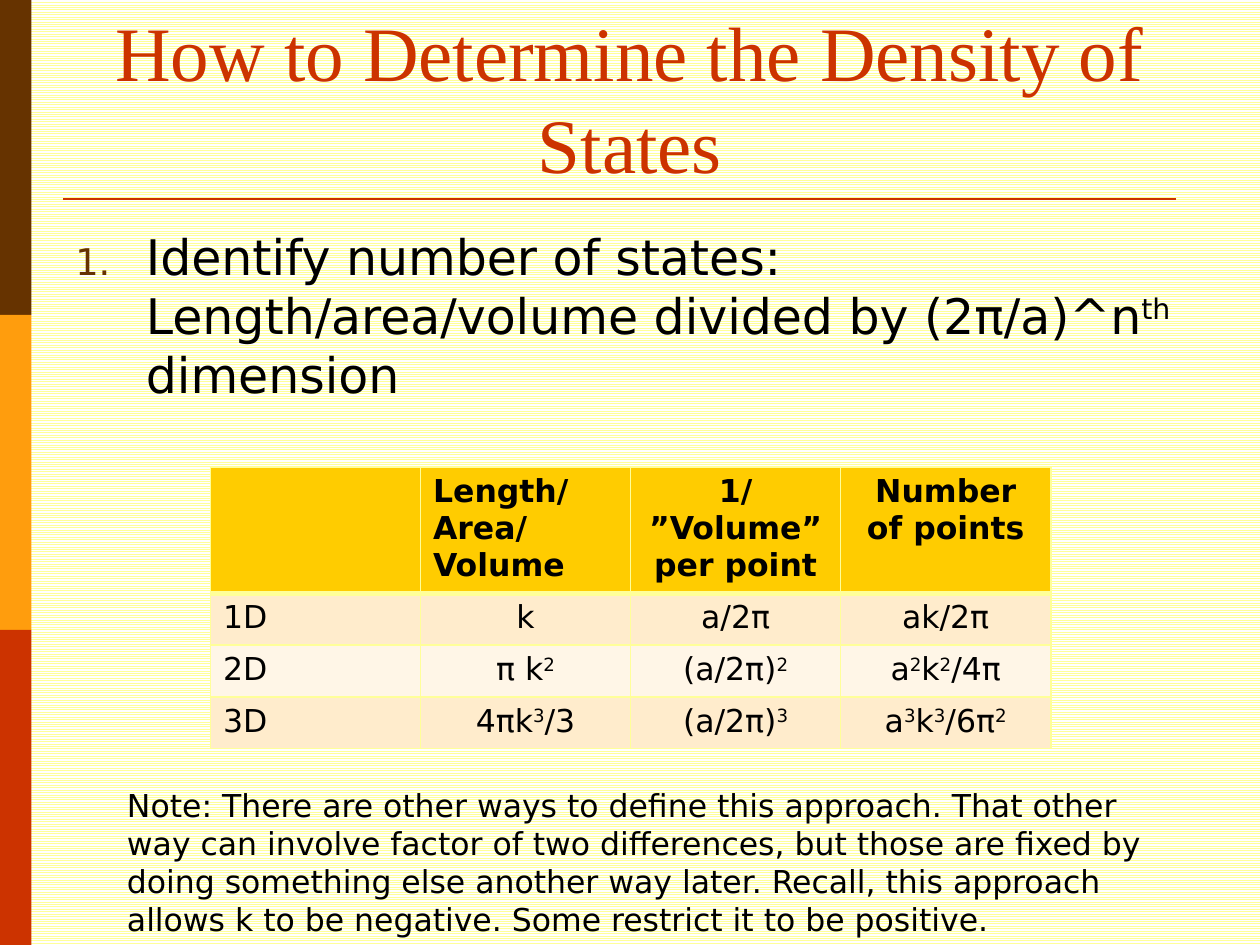
from lxml.etree import SubElement
from pptx import Presentation
from pptx.dml.color import RGBColor
from pptx.enum.dml import MSO_PATTERN
from pptx.enum.shapes import MSO_CONNECTOR, MSO_SHAPE
from pptx.enum.text import MSO_ANCHOR, MSO_AUTO_SIZE, PP_ALIGN
from pptx.oxml.ns import qn
from pptx.util import Inches, Pt

TITLE = "How to Determine the Density of States"
# Text between bars is superscript.
STEP = "Identify number of states: Length/area/volume divided by (2π/a)^n|th| dimension"
HEADER = ["", "Length/\nArea/\nVolume", "1/\n”Volume” per point", "Number of points"]
ROWS = [
    ["1D", "k", "a/2π", "ak/2π"],
    ["2D", "π k|2|", "(a/2π)|2|", "a|2|k|2|/4π"],
    ["3D", "4πk|3|/3", "(a/2π)|3|", "a|3|k|3|/6π|2|"],
]
NOTE = ("Note: There are other ways to define this approach. That other way can involve "
        "factor of two differences, but those are fixed by doing something else another "
        "way later. Recall, this approach allows k to be negative. Some restrict it to be "
        "positive.")

THEME = {
    "title_font": "Times New Roman", "body_font": "DejaVu Sans",
    "title_size": 44, "step_size": 28, "small_size": 18,
    "accent": "CC3300", "text": "000000", "number": "663300",
    "stripe": "FFFF99", "paper": "FFFFFF", "header": "FFCC00",
    "bands": ["FFECCC", "FFF6E7"], "sidebar": ["663300", "FF9D0D", "CC3300"],
}


def rgb(name):
    return RGBColor.from_string(THEME.get(name, name))


def style(r, size, font="body_font", color="text", bold=False):
    r.font.name = THEME[font]
    r.font.size = Pt(THEME[size])
    r.font.color.rgb = rgb(color)
    r.font.bold = bold


def write(p, text, size, bold=False):
    for i, part in enumerate(text.split("|")):
        if part:
            r = p.add_run()
            r.text = part
            style(r, size, bold=bold)
            if i % 2:
                r._r.get_or_add_rPr().set("baseline", "30000")


def add_text(s, box, text, size):
    tf = s.shapes.add_textbox(*map(Inches, box)).text_frame
    tf.word_wrap = True
    write(tf.paragraphs[0], text, size)
    return tf.paragraphs[0]


def add_number(p):
    pPr = p._p.get_or_add_pPr()
    pPr.set("marL", str(Inches(0.56)))
    pPr.set("indent", str(Inches(-0.56)))
    color = SubElement(pPr, qn("a:buClr"))
    SubElement(color, qn("a:srgbClr"), val=THEME["number"])
    SubElement(pPr, qn("a:buSzPct"), val="75000")
    SubElement(pPr, qn("a:buFont"), typeface=THEME["body_font"])
    SubElement(pPr, qn("a:buAutoNum"), type="arabicPeriod")


def add_borders(cell, top, bottom):
    tcPr = cell._tc.get_or_add_tcPr()
    for side, width in (("L", 1), ("R", 1), ("T", top), ("B", bottom)):
        ln = SubElement(tcPr, qn(f"a:ln{side}"), w=str(Pt(width)))
        fill = SubElement(ln, qn("a:solidFill"))
        SubElement(fill, qn("a:srgbClr"), val=THEME["stripe"])


def add_states_table(s):
    data = [HEADER] + ROWS
    heights = [0.97] + [0.41] * len(ROWS)
    table = s.shapes.add_table(len(data), len(HEADER), Inches(1.67), Inches(3.71),
                               Inches(6.67), Inches(sum(heights))).table
    for i, (row, height) in enumerate(zip(data, heights)):
        table.rows[i].height = Inches(height)
        for j, text in enumerate(row):
            cell = table.cell(i, j)
            add_borders(cell, 3 if i == 1 else 1, 3 if i == 0 else 1)
            cell.fill.solid()
            cell.fill.fore_color.rgb = rgb("header" if i == 0 else THEME["bands"][(i - 1) % 2])
            left = j == 0 or (i == 0 and j == 1)
            tf = cell.text_frame
            for n, line in enumerate(text.split("\n")):
                p = tf.add_paragraph() if n else tf.paragraphs[0]
                p.alignment = PP_ALIGN.LEFT if left else PP_ALIGN.CENTER
                write(p, line, "small_size", bold=i == 0)


def add_frame(s):
    fill = s.background.fill
    fill.patterned()
    fill.pattern = MSO_PATTERN.NARROW_HORIZONTAL
    fill.fore_color.rgb = rgb("stripe")
    fill.back_color.rgb = rgb("paper")
    for i, color in enumerate(THEME["sidebar"]):
        bar = s.shapes.add_shape(MSO_SHAPE.RECTANGLE, 0, Inches(2.5 * i),
                                 Inches(0.25), Inches(2.5))
        bar.shadow.inherit = False
        bar.fill.solid()
        bar.fill.fore_color.rgb = rgb(color)
        bar.line.fill.background()
    rule = s.shapes.add_connector(MSO_CONNECTOR.STRAIGHT, Inches(0.5), Inches(1.58),
                                  Inches(9.33), Inches(1.58))
    rule.line.color.rgb = rgb("accent")
    rule.line.width = Pt(1.5)
    SubElement(rule._element.spPr, qn("a:effectLst"))


def add_title(s):
    sp = s.shapes.title
    sp.left, sp.top, sp.width, sp.height = map(Inches, (0.5, 0.3, 9, 1.25))
    tf = sp.text_frame
    tf.text = TITLE
    tf.auto_size = MSO_AUTO_SIZE.NONE
    tf.vertical_anchor = MSO_ANCHOR.BOTTOM
    p = tf.paragraphs[0]
    p.alignment = PP_ALIGN.CENTER
    style(p.runs[0], "title_size", "title_font", "accent")


def main():
    prs = Presentation()
    prs.slide_width, prs.slide_height = Inches(10), Inches(7.5)
    s = prs.slides.add_slide(prs.slide_layouts[5])
    add_frame(s)
    add_title(s)
    p = add_text(s, (0.5, 1.75, 9, 4.95), STEP, "step_size")
    p.space_before = Pt(5.6)
    add_number(p)
    add_states_table(s)
    add_text(s, (0.91, 6.19, 8.43, 1.31), NOTE, "small_size")
    prs.save("out.pptx")


if __name__ == "__main__":
    main()
